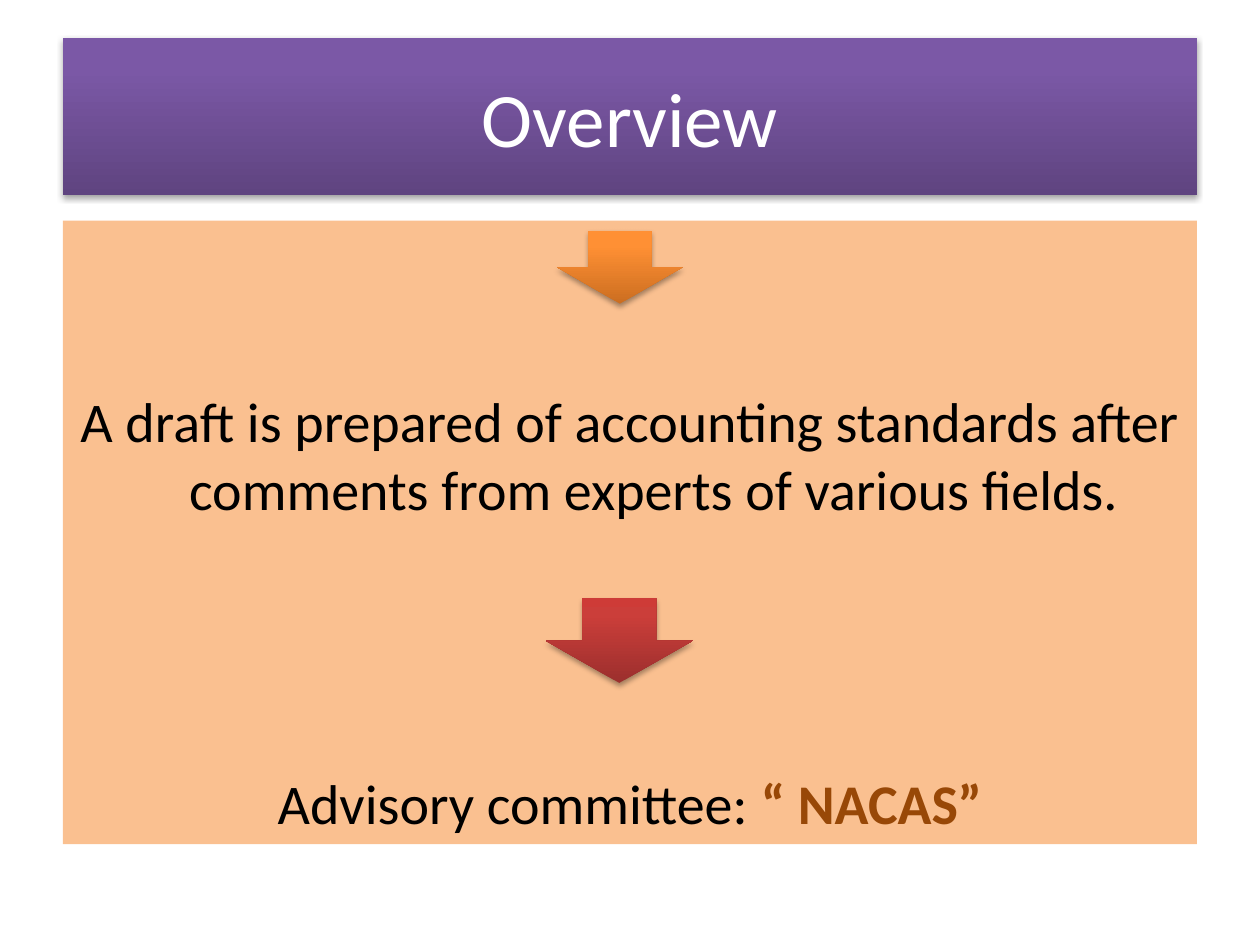
from lxml import etree
from pptx import Presentation
from pptx.dml.color import RGBColor
from pptx.enum import shapes, text
from pptx.oxml import parse_xml
from pptx.oxml.ns import nsdecls
from pptx.util import Inches, Pt

# Content
TITLE = "Overview"
STEPS = [
    [("A draft is prepared of accounting standards after comments "
      "from experts of various fields.", {})],
    [("Advisory committee: ", {}), ("“ NACAS”", {"color": "984807", "bold": True})],
]
ARROWS = [  # left, top, width, height, dark-to-light colours
    (4.42, 1.83, 1, 0.58, ("CC6E20", "FF9034", "FF9136")),
    (4.33, 4.75, 1.17, 0.67, ("9C2F2D", "CB3E3A", "CE3B37")),
]
TITLE_COLORS = ("5F4480", "7B58A6", "7C57A8")
STOPS = (0, 80, 100)
STEP_GAP = 141  # points, leaves room for the arrow between the steps


def rgb(color):
    return RGBColor.from_string(color)


def place(shape, left, top, width, height):
    shape.left, shape.top = Inches(left), Inches(top)
    shape.width, shape.height = Inches(width), Inches(height)


def add_text(paragraph, words, size=32, color="000000", bold=False):
    run = paragraph.add_run()
    run.text = words
    run.font.name, run.font.size, run.font.bold = "Calibri", Pt(size), bold
    run.font.color.rgb = rgb(color)
    paragraph.alignment = text.PP_ALIGN.CENTER


def add_relief(shape, colors):
    """Vertical gradient, dark at the bottom, with a soft shadow below."""
    shape.fill.gradient()
    shape.fill.gradient_angle = 90
    stop_list = shape.fill.gradient_stops[0]._gs.getparent()
    for stop in list(stop_list):
        stop_list.remove(stop)
    for position, color in zip(STOPS, colors):
        stop_list.append(parse_xml(
            f'<a:gs {nsdecls("a")} pos="{position * 1000}"><a:srgbClr val="{color}"/></a:gs>'))
    shape.line.fill.background()
    shape.shadow.inherit = False
    effects = shape._element.spPr.find("{*}effectLst")
    effects.append(etree.fromstring(
        f'<a:outerShdw {nsdecls("a")} blurRad="{Pt(3.1)}" dist="{Pt(1.8)}" dir="5400000" '
        'rotWithShape="0"><a:srgbClr val="000000"><a:alpha val="35000"/></a:srgbClr>'
        '</a:outerShdw>'))


prs = Presentation()
prs.slide_width, prs.slide_height = Inches(10), Inches(7.5)
slide = prs.slides.add_slide(prs.slide_layouts[5])

# Title band
title = slide.shapes.title
place(title, 0.5, 0.3, 9, 1.25)
title.text_frame.vertical_anchor = text.MSO_ANCHOR.MIDDLE
add_text(title.text_frame.paragraphs[0], TITLE, size=44, color="FFFFFF")
add_relief(title, TITLE_COLORS)

# Panel with the steps
panel = slide.shapes.add_textbox(Inches(0.5), Inches(1.75), Inches(9), Inches(4.95))
panel.fill.solid()
panel.fill.fore_color.rgb = rgb("FAC090")
frame = panel.text_frame
frame.word_wrap = True
frame.margin_top = Inches(1.32)
for number, step in enumerate(STEPS):
    paragraph = frame.add_paragraph() if number else frame.paragraphs[0]
    paragraph.space_before = Pt(STEP_GAP if number else 0)
    indent = paragraph._p.get_or_add_pPr()
    indent.set("marL", str(Inches(0.38)))
    indent.set("indent", str(Inches(-0.38)))
    for words, style in step:
        add_text(paragraph, words, **style)

# Arrows leading to each step
for *box, colors in ARROWS:
    arrow = slide.shapes.add_shape(shapes.MSO_SHAPE.DOWN_ARROW, *map(Inches, box))
    add_relief(arrow, colors)

prs.save("out.pptx")
